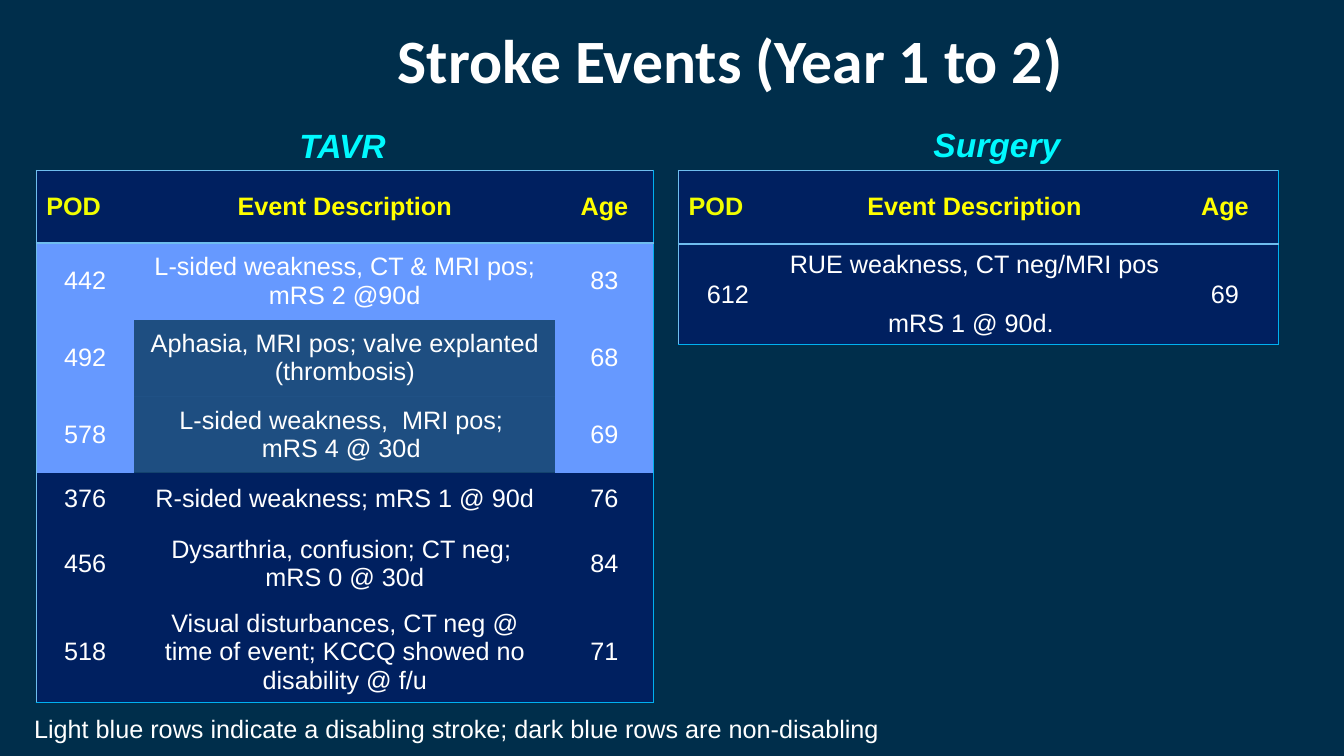
import dataclasses

import lxml.etree
import pptx
import pptx.dml.color
import pptx.enum.text
import pptx.oxml.ns
import pptx.util

Inches = pptx.util.Inches
Align = pptx.enum.text.PP_ALIGN
Anchor = pptx.enum.text.MSO_ANCHOR


@dataclasses.dataclass(frozen=True)
class Theme:
    background: str = "002E4B"
    white: str = "FFFFFF"
    cyan: str = "00F9FF"
    lime: str = "F1FE00"
    yellow: str = "FFFF00"
    navy: str = "002060"
    light_blue: str = "6699FF"
    pale_edge: str = "6FBDEE"
    bright_edge: str = "00B0F0"
    title_size: int = 44
    heading_size: int = 24
    body_size: int = 18
    title_font: str = "Calibri"
    body_font: str = "Arial"


THEME = Theme()
HEADER = ("POD", "Event Description", "Age")

# Each event: days, description, age, disabling
TAVR_EVENTS = [
    ("442", "L-sided weakness, CT & MRI pos; mRS 2 @90d", "83", True),
    ("492", "Aphasia, MRI pos; valve explanted (thrombosis)", "68", True),
    ("578", "L-sided weakness,  MRI pos; \vmRS 4 @ 30d ", "69", True),
    ("376", "R-sided weakness; mRS 1 @ 90d", "76", False),
    ("456", "Dysarthria, confusion; CT neg; \vmRS 0 @ 30d", "84", False),
    ("518", "Visual disturbances, CT neg @ time of event; KCCQ showed no "
            "disability @ f/u", "71", False),
]
SURGERY_EVENTS = [
    ("612", "RUE weakness, CT neg/MRI pos \vmRS 1 @ 90d. ", "69", False),
]


def rgb(color):
    return pptx.dml.color.RGBColor.from_string(color)


def write(frame, text, color, align=Align.LEFT, **formats):
    para = frame.paragraphs[0]
    para.text = text
    para.alignment = align
    formats = {"name": THEME.body_font, "size": THEME.body_size,
               "bold": False, **formats}
    formats["size"] = pptx.util.Pt(formats["size"])
    for span in para.runs:
        for key, value in formats.items():
            setattr(span.font, key, value)
        span.font.color.rgb = rgb(color)


def add_label(page, box, text, color, **formats):
    frame = page.shapes.add_textbox(*map(Inches, box)).text_frame
    frame.word_wrap = False
    write(frame, text, color, **formats)


def add_title(page, box, text):
    frame = page.shapes.add_textbox(*map(Inches, box)).text_frame
    frame.word_wrap = True
    frame.vertical_anchor = Anchor.MIDDLE
    for side in ("left", "right", "top", "bottom"):
        setattr(frame, f"margin_{side}", Inches(0.05))
    write(frame, text, THEME.white, Align.CENTER, name=THEME.title_font,
          size=THEME.title_size, bold=True)


def add_xml(parent, tag, **attributes):
    return lxml.etree.SubElement(parent, pptx.oxml.ns.qn(tag), attributes)


def set_borders(cell, edges):
    properties = cell._tc.get_or_add_tcPr()
    for side in "LRTB":
        line = add_xml(properties, f"a:ln{side}", w=str(pptx.util.Pt(1)))
        if edges.get(side):
            fill = add_xml(line, "a:solidFill")
            add_xml(fill, "a:srgbClr", val=edges[side])
        else:
            add_xml(line, "a:noFill")


def set_fill(cell, disabling):
    cell.fill.solid()
    cell.fill.fore_color.rgb = rgb(THEME.light_blue if disabling else THEME.navy)
    if disabling:
        color = cell._tc.tcPr.find(".//" + pptx.oxml.ns.qn("a:srgbClr"))
        add_xml(color, "a:alpha", val="30000")


def add_event_table(page, box, widths, heights, events):
    rows = [(*HEADER, False), *events]
    table = page.shapes.add_table(
        len(rows), len(widths), *map(Inches, box)).table
    table.first_row = table.horz_banding = False
    for column, width in zip(table.columns, widths):
        column.width = Inches(width)
    for row, height in zip(table.rows, heights):
        row.height = Inches(height)

    for r, (*texts, disabling) in enumerate(rows):
        for c, text in enumerate(texts):
            cell = table.cell(r, c)
            cell.vertical_anchor = Anchor.MIDDLE
            # Outer frame plus the rule under the header
            set_borders(cell, {
                "L": THEME.pale_edge if c == 0 else None,
                "R": THEME.bright_edge if c == len(widths) - 1 else None,
                "T": THEME.pale_edge if r < 2 else None,
                "B": (THEME.pale_edge if r == 0 else
                      THEME.bright_edge if r == len(rows) - 1 else None),
            })
            set_fill(cell, disabling)
            color = THEME.white
            if r == 0:
                color = THEME.lime if c == 0 else THEME.yellow
            align = Align.LEFT if r == c == 0 else Align.CENTER
            write(cell.text_frame, text, color, align, bold=r == 0)


def build_stroke_slide(deck):
    page = deck.slides.add_slide(deck.slide_layouts[6])
    page.background.fill.solid()
    page.background.fill.fore_color.rgb = rgb(THEME.background)
    add_title(page, (1.58, 0.17, 11.33, 0.83), "Stroke Events (Year 1 to 2)")

    # Treatment groups
    heading = {"size": THEME.heading_size, "bold": True, "italic": True}
    add_event_table(page, (0.36, 1.69, 6.12, 4.8), (0.97, 4.18, 0.97),
                    (0.72, 0.76, 0.76, 0.76, 0.52, 0.76, 0.52), TAVR_EVENTS)
    add_label(page, (2.87, 1.19, 1.07, 0.5), "TAVR", THEME.cyan, **heading)
    add_event_table(page, (6.73, 1.69, 5.95, 1.55), (0.98, 3.91, 1.06),
                    (0.73, 0.82), SURGERY_EVENTS)
    add_label(page, (9.16, 1.18, 1.47, 0.5), "Surgery", THEME.cyan, **heading)

    # Row colour key
    add_label(page, (0.24, 7.03, 8.66, 0.4),
              "Light blue rows indicate a disabling stroke; "
              "dark blue rows are non-disabling", THEME.white)


def main():
    deck = pptx.Presentation()
    deck.slide_width = Inches(13.33)
    deck.slide_height = Inches(7.5)
    build_stroke_slide(deck)
    deck.save("out.pptx")


if __name__ == "__main__":
    main()
